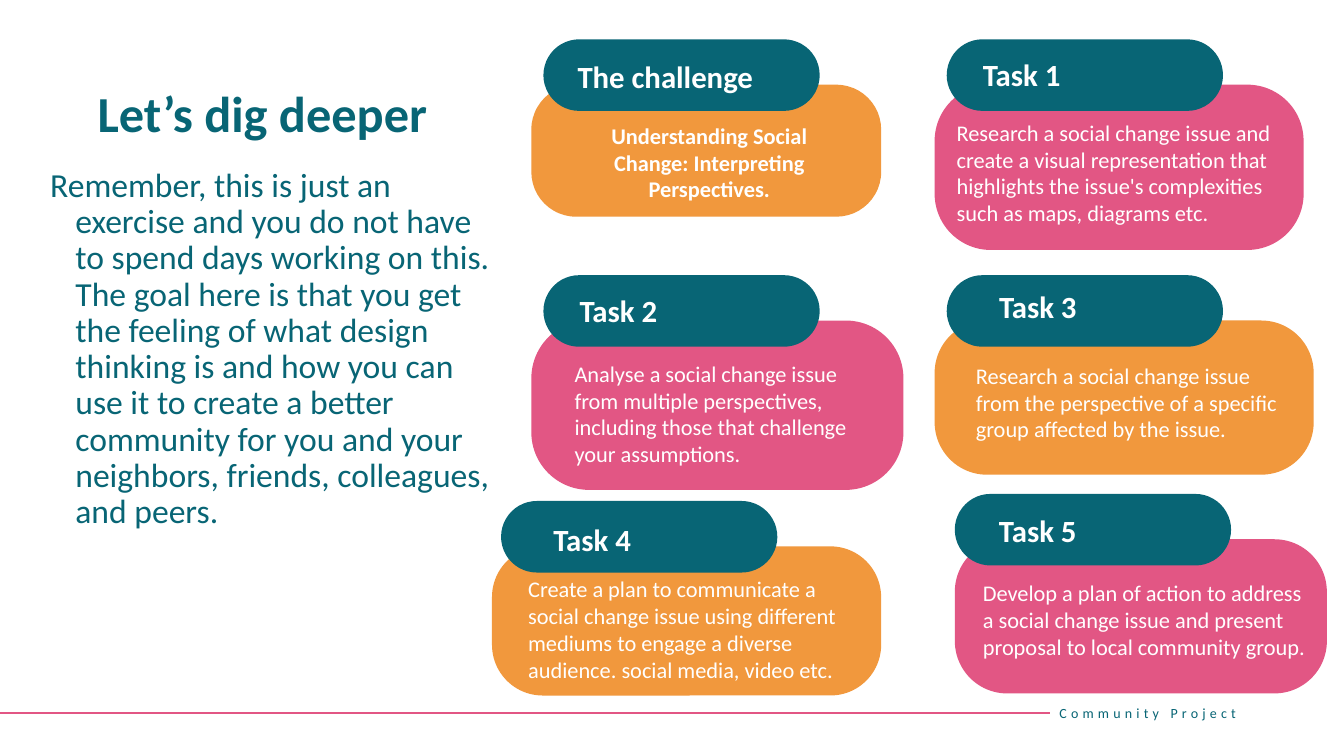
from dataclasses import dataclass
from typing import NamedTuple

from lxml import etree
from pptx import Presentation
from pptx.dml.color import RGBColor
from pptx.enum.shapes import MSO_CONNECTOR, MSO_SHAPE
from pptx.enum.text import MSO_ANCHOR, MSO_AUTO_SIZE, PP_ALIGN
from pptx.oxml.ns import qn
from pptx.util import Pt

ROUNDED = MSO_SHAPE.ROUNDED_RECTANGLE
STRAIGHT = MSO_CONNECTOR.STRAIGHT
MIDDLE = MSO_ANCHOR.MIDDLE
FIT_SHAPE = MSO_AUTO_SIZE.SHAPE_TO_FIT_TEXT
LEFT, CENTER = PP_ALIGN.LEFT, PP_ALIGN.CENTER
LEFT_SIDE = 1

EMU_PER_PX = 9144
BLANK_LAYOUT = 6
SLIDE_WIDTH, SLIDE_HEIGHT = 1333, 750


@dataclass(frozen=True)
class Theme:
    font: str = "Calibri"
    teal: str = "086575"
    orange: str = "F1983D"
    pink: str = "E25684"
    white: str = "FFFFFF"
    heading_size: int = 36
    intro_size: int = 24
    label_size: int = 22
    card_size: int = 16
    footer_size: int = 10
    rule_width: float = 1.5


THEME = Theme()


class Box(NamedTuple):
    left: int
    top: int
    width: int
    height: int

    def inner(self, left, top, width, height):
        return Box(self.left + left, self.top + top, width, height)


class Card(NamedTuple):
    label: str
    text: str
    fill: str
    box: Box
    pill_left: int
    label_place: tuple
    text_place: tuple
    featured: bool = False


CARDS = [
    Card("The challenge", "Understanding Social Change: Interpreting Perspectives.",
         THEME.orange, Box(527, 84, 347, 131), 12, (36, -32, 274), (34, 32, 285, 91), True),
    Card("Task 1", "Research a social change issue and create a visual representation "
         "that highlights the issue's complexities such as maps, diagrams etc.",
         THEME.pink, Box(927, 84, 366, 164), 12, (38, -34, 222), (12, 29, 354, 118)),
    Card("Task 2", "Analyse a social change issue from multiple perspectives, "
         "including those that challenge your assumptions.",
         THEME.pink, Box(527, 318, 369, 168), 12, (38, -33, 233), (33, 34, 303, 118)),
    Card("Task 3", "Research a social change issue from the perspective of "
         "a specific group affected by the issue.",
         THEME.orange, Box(927, 318, 376, 153), 12, (54, -37, 212), (31, 36, 322, 91)),
    Card("Task 4", "Create a plan to communicate a social change issue using different "
         "mediums to engage a diverse audience. social media, video etc.",
         THEME.orange, Box(488, 542, 386, 148), 9, (51, -30, 212), (26, 24, 360, 118)),
    Card("Task 5", "Develop a plan of action to address a social change issue "
         "and present proposal to local community group.",
         THEME.pink, Box(947, 535, 369, 153), 0, (34, -32, 233), (18, 35, 343, 91)),
]


def px(length):
    return length * EMU_PER_PX


def emu(box):
    return [px(length) for length in box]


def add_text(slide, box, text, size, color, bold=False, align=LEFT):
    shape = slide.shapes.add_textbox(*emu(box))
    frame = shape.text_frame
    frame.word_wrap = True
    frame.text = text
    paragraph = frame.paragraphs[0]
    paragraph.alignment = align
    font = paragraph.runs[0].font
    font.name = THEME.font
    font.size = Pt(size)
    font.bold = bold
    font.color.rgb = RGBColor.from_string(color)
    return shape


def add_rounded(slide, box, fill, roundness):
    shape = slide.shapes.add_shape(ROUNDED, *emu(box))
    shape.adjustments[0] = roundness
    shape.shadow.inherit = False
    shape.fill.solid()
    shape.fill.fore_color.rgb = RGBColor.from_string(fill)
    shape.line.fill.background()


def add_card(slide, card):
    label_left, label_top, label_width = card.label_place
    add_rounded(slide, card.box, card.fill, 0.34)
    add_rounded(slide, card.box.inner(card.pill_left, -45, 274, 71), THEME.teal, 0.5)
    label = add_text(slide, card.box.inner(label_left, label_top, label_width, 47),
                     card.label, THEME.label_size, THEME.white, bold=True)
    text = add_text(slide, card.box.inner(*card.text_place), card.text, THEME.card_size,
                    THEME.white, card.featured, CENTER if card.featured else LEFT)
    for shape in (label, text):
        shape.text_frame.auto_size = FIT_SHAPE


def add_introduction(slide, box):
    heading = add_text(slide, box.inner(47, 0, 460, 88), "Let’s dig deeper",
                       THEME.heading_size, THEME.teal, bold=True)
    body = add_text(
        slide, box.inner(0, 79, box.width, box.height - 79),
        "Remember, this is just an exercise and you do not have to spend days working on "
        "this. The goal here is that you get the feeling of what design thinking is and how "
        "you can use it to create a better community for you and your neighbors, friends, "
        "colleagues, and peers.", THEME.intro_size, THEME.teal)
    for shape in (heading, body):
        shape.text_frame.paragraphs[0].line_spacing = 0.9
    properties = body.text_frame.paragraphs[0]._p.get_or_add_pPr()
    properties.set("marL", str(px(25)))
    properties.set("indent", str(px(-25)))


def add_footer(slide, box):
    label_left = 1041
    label = add_text(slide, box.inner(label_left, 0, 273, box.height),
                     "Community Project", THEME.footer_size, THEME.teal)
    label.text_frame.vertical_anchor = MIDDLE
    label.text_frame.paragraphs[0].runs[0].font._element.set("spc", "300")
    middle = px(box.top + box.height // 2)
    rule = slide.shapes.add_connector(
        STRAIGHT, px(box.left), middle, px(box.left + label_left), middle)
    rule.end_connect(label, LEFT_SIDE)
    rule.line.color.rgb = RGBColor.from_string(THEME.pink)
    rule.line.width = Pt(THEME.rule_width)
    etree.SubElement(rule._element.spPr, qn("a:effectLst"))


def main():
    presentation = Presentation()
    presentation.slide_width = px(SLIDE_WIDTH)
    presentation.slide_height = px(SLIDE_HEIGHT)
    slide = presentation.slides.add_slide(presentation.slide_layouts[BLANK_LAYOUT])
    add_footer(slide, Box(0, 687, SLIDE_WIDTH, 40))
    add_introduction(slide, Box(40, 83, 460, 500))
    for card in CARDS:
        add_card(slide, card)
    presentation.save("out.pptx")


if __name__ == "__main__":
    main()
